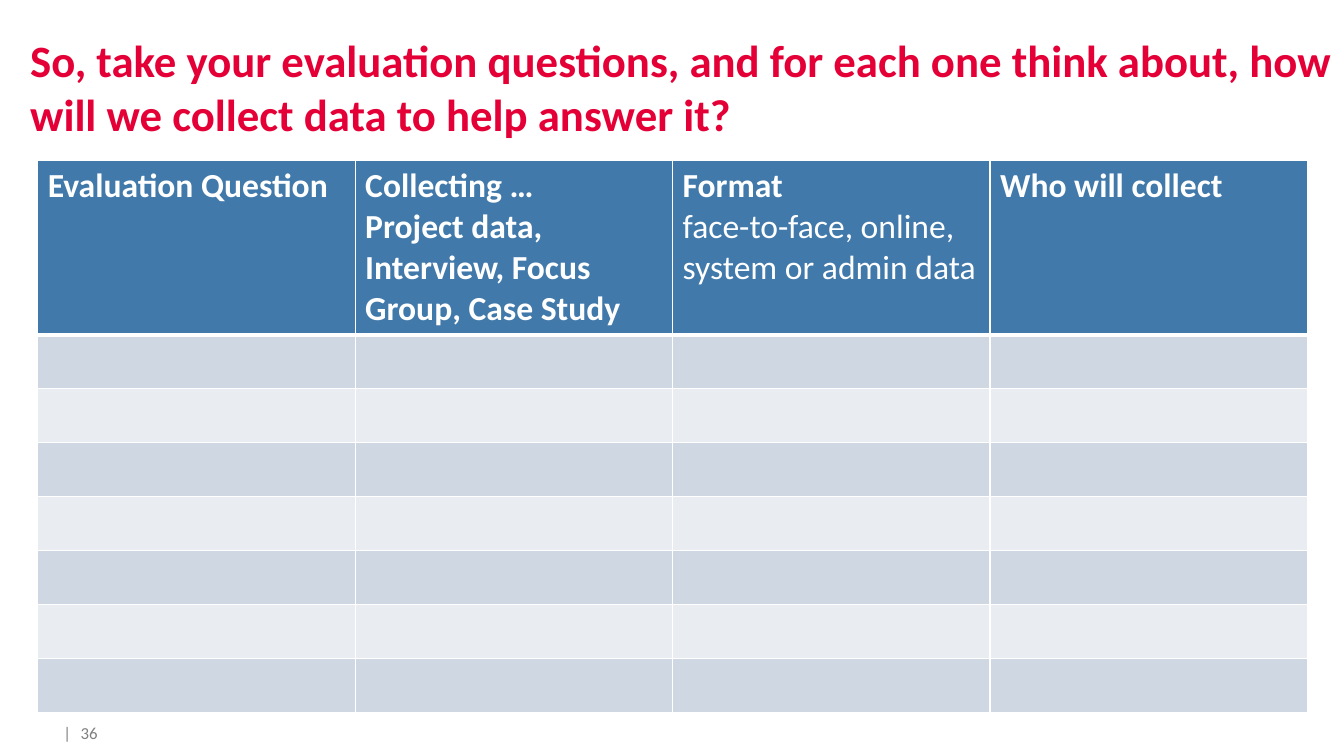
"""Build the data collection planning slide."""
from dataclasses import dataclass

from lxml import etree
from pptx import Presentation, util as u
from pptx.dml.color import RGBColor
from pptx.enum import text
from pptx.oxml import ns


@dataclass(frozen=True)
class Theme:
    """Colours, font and type sizes of the slide."""
    font: str = "Calibri"
    title: str = "E40037"
    header: str = "4179AA"
    bands: tuple = ("CFD7E2", "E9ECF1")
    white: str = "FFFFFF"
    muted: str = "808080"
    title_size: int = 32
    table_size: int = 24
    number_size: int = 12


THEME = Theme()
TITLE = ("So, take your evaluation questions, and for each one think about, "
         "how will we collect data to help answer it?")
HEADERS = [
    [("Evaluation Question", True)],
    [("Collecting …", True),
     ("Project data, Interview, Focus Group, Case Study", True)],
    [("Format", True), ("face-to-face, online, system or admin data", False)],
    [("Who will collect", True)],
]
BLANK_ROWS = 7


def add_run(p, words, size, color, bold=False):
    """Add one formatted run to a paragraph."""
    r = p.add_run()
    r.text = words
    r.font.name = THEME.font
    r.font.size = u.Pt(size)
    r.font.bold = bold
    r.font.color.rgb = RGBColor.from_string(color)


def set_insets(tf, left=0):
    """Clear the frame margins except for the left one."""
    tf.margin_left = left
    tf.margin_top = tf.margin_right = tf.margin_bottom = 0


def add_title(s):
    """Place and fill the title placeholder."""
    sp = s.shapes.title
    sp.left, sp.top, sp.width, sp.height = u.Cm(0.76), u.Cm(0.71), u.Cm(33.1), u.Cm(2.95)
    tf = sp.text_frame
    set_insets(tf)
    tf.word_wrap = True
    tf.auto_size = text.MSO_AUTO_SIZE.NONE
    tf.vertical_anchor = text.MSO_ANCHOR.MIDDLE
    p = tf.paragraphs[0]
    p.alignment = text.PP_ALIGN.LEFT
    add_run(p, TITLE, THEME.title_size, THEME.title, True)


def style_cell(cell, color, top=1, bottom=1):
    """Give a cell its fill and white borders, with widths in points."""
    tc_pr = cell._tc.get_or_add_tcPr()
    for side, width in zip("LRTB", (1, 1, top, bottom)):
        ln = etree.SubElement(tc_pr, ns.qn(f"a:ln{side}"), w=str(u.Pt(width)))
        fill = etree.SubElement(ln, ns.qn("a:solidFill"))
        etree.SubElement(fill, ns.qn("a:srgbClr"), val=THEME.white)
    cell.fill.solid()
    cell.fill.fore_color.rgb = RGBColor.from_string(color)


def add_planning_table(s):
    """Add the header row and the blank banded rows."""
    header_height, row_height, col_width = u.Cm(4.37), u.Cm(1.36), u.Cm(8)
    table = s.shapes.add_table(
        BLANK_ROWS + 1, len(HEADERS), u.Cm(0.95), u.Cm(4.05),
        col_width * len(HEADERS), header_height + row_height * BLANK_ROWS).table
    for col in table.columns:
        col.width = col_width
    for i, row in enumerate(table.rows):
        row.height = row_height if i else header_height
        for cell in row.cells:
            if i:
                style_cell(cell, THEME.bands[(i - 1) % 2], top=3 if i == 1 else 1)
            else:
                style_cell(cell, THEME.header, bottom=3)
    for cell, lines in zip(table.rows[0].cells, HEADERS):
        tf = cell.text_frame
        for i, (words, bold) in enumerate(lines):
            p = tf.add_paragraph() if i else tf.paragraphs[0]
            add_run(p, words, THEME.table_size, THEME.white, bold)


def add_page_number(s):
    """Add the page number, tabbed away from its bar."""
    sp = s.shapes.add_textbox(u.Cm(0.3), u.Cm(18.26), u.Cm(2.3), u.Cm(0.4))
    tf = sp.text_frame
    set_insets(tf, u.Cm(1.3))
    tf.word_wrap = True
    tf.vertical_anchor = text.MSO_ANCHOR.MIDDLE
    p = tf.paragraphs[0]
    tabs = etree.SubElement(p._p.get_or_add_pPr(), ns.qn("a:tabLst"))
    etree.SubElement(tabs, ns.qn("a:tab"), pos=str(u.Cm(0.43)), algn="l")
    add_run(p, "|\t36", THEME.number_size, THEME.muted)


def main():
    """Build and save the slide."""
    prs = Presentation()
    prs.slide_width, prs.slide_height = u.Cm(33.87), u.Cm(19.05)
    s = prs.slides.add_slide(prs.slide_layouts[5])
    add_title(s)
    add_planning_table(s)
    add_page_number(s)
    prs.save("out.pptx")


if __name__ == "__main__":
    main()
